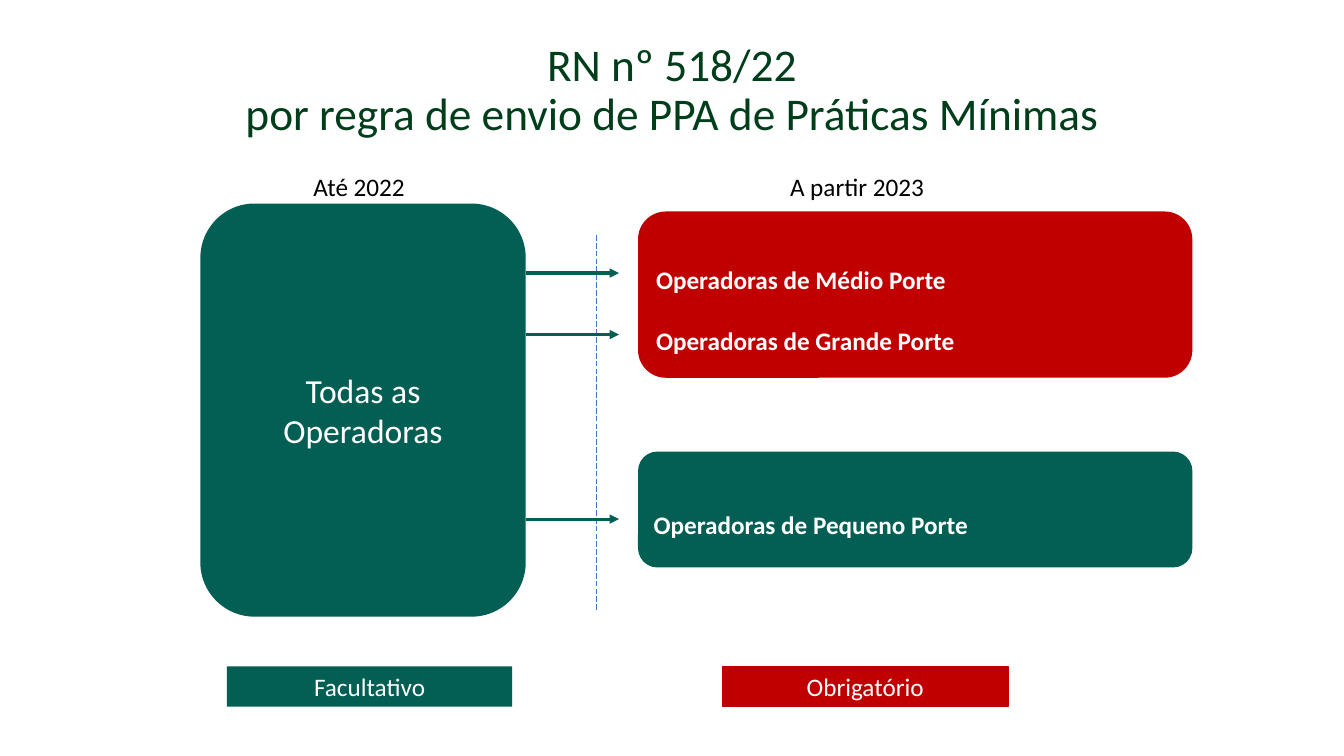
from dataclasses import dataclass

from lxml.etree import SubElement
from pptx import Presentation
from pptx.dml.color import RGBColor
from pptx.enum.dml import MSO_LINE
from pptx.enum.shapes import MSO_CONNECTOR, MSO_SHAPE
from pptx.enum.text import MSO_ANCHOR as Anchor, PP_ALIGN as Align
from pptx.oxml.ns import qn
from pptx.slide import Slide
from pptx.util import Cm, Pt

COLORS = {
    "title": "003E1B",
    "optional": "035E53",
    "mandatory": "C00000",
    "divider": "4472C4",
    "black": "000000",
    "white": "FFFFFF",
}
FONT = "Calibri"


@dataclass(frozen=True)
class Block:
    """Text in an area given in centimetres; without a fill it is a text box."""
    lines: tuple[str, ...]
    left: float
    top: float
    width: float
    height: float
    size: float = 18
    color: str = "white"
    fill: str | None = None
    outline: str | None = None
    preset: MSO_SHAPE = MSO_SHAPE.RECTANGLE
    align: Align = Align.CENTER
    anchor: Anchor = Anchor.MIDDLE
    bold: bool = False
    spacing: float = 1.0


@dataclass(frozen=True)
class Line:
    start: tuple[float, float]
    end: tuple[float, float]
    color: str
    weight: float
    dashed: bool = False
    arrow: bool = False


ROUNDED = MSO_SHAPE.ROUNDED_RECTANGLE
GROUP_LEFT, GROUP_WIDTH = 16.08, 13.97
LEGEND_TOP, LEGEND_WIDTH, LEGEND_HEIGHT = 16.79, 7.19, 1.02
ARROW_START, ARROW_END = 13.26, 15.6
ARROW_HEIGHTS = (6.88, 8.43, 13.08)

BLOCKS = (
    Block(("RN nº 518/22\vpor regra de envio de PPA de Práticas Mínimas",),
          0, 1.19, 33.87, 2.46, size=32.4, color="title",
          anchor=Anchor.BOTTOM, spacing=0.9),
    Block(("Todas as Operadoras",), 5.05, 5.13, 8.2, 10.41, size=24,
          fill="optional", preset=ROUNDED),
    Block(("Operadoras de Médio Porte", "Operadoras de Grande Porte"),
          GROUP_LEFT, 5.33, GROUP_WIDTH, 4.19, fill="mandatory",
          preset=ROUNDED, align=Align.LEFT, bold=True, spacing=2.0),
    Block(("Operadoras de Pequeno Porte",),
          GROUP_LEFT, 11.38, GROUP_WIDTH, 2.92, fill="optional",
          preset=ROUNDED, align=Align.LEFT, bold=True, spacing=2.0),
    Block(("Até 2022",), 7.65, 4.19, 4, 1.02, color="black",
          align=Align.LEFT, anchor=Anchor.TOP),
    Block(("A partir 2023",), 19.66, 4.19, 5, 1.02, color="black",
          align=Align.LEFT, anchor=Anchor.TOP),
    Block(("Facultativo",), 5.72, LEGEND_TOP, LEGEND_WIDTH, LEGEND_HEIGHT,
          fill="optional"),
    Block(("Obrigatório",), 18.21, LEGEND_TOP, LEGEND_WIDTH, LEGEND_HEIGHT,
          fill="mandatory", outline="mandatory"),
)
LINES = (
    Line((15.04, 5.92), (15.04, 15.39), "divider", 0.5, dashed=True),
    *(Line((ARROW_START, y), (ARROW_END, y), "optional", 2.25, arrow=True)
      for y in ARROW_HEIGHTS),
)


def rgb(name: str) -> RGBColor:
    return RGBColor.from_string(COLORS[name])


def draw_block(slide: Slide, block: Block) -> None:
    area = [Cm(v) for v in (block.left, block.top, block.width, block.height)]
    if block.fill:
        shape = slide.shapes.add_shape(block.preset, *area)
        shape.shadow.inherit = False
        shape.fill.solid()
        shape.fill.fore_color.rgb = rgb(block.fill)
        if block.outline:
            shape.line.color.rgb = rgb(block.outline)
            shape.line.width = Pt(1)
        else:
            shape.line.fill.background()
    else:
        shape = slide.shapes.add_textbox(*area)

    frame = shape.text_frame
    frame.word_wrap = True
    frame.vertical_anchor = block.anchor
    frame.text = "\n".join(block.lines)
    for paragraph in frame.paragraphs:
        paragraph.alignment = block.align
        paragraph.line_spacing = block.spacing
        font = paragraph.font
        font.name = FONT
        font.size = Pt(block.size)
        font.bold = block.bold
        font.color.rgb = rgb(block.color)


def draw_line(slide: Slide, line: Line) -> None:
    points = [Cm(v) for v in (*line.start, *line.end)]
    connector = slide.shapes.add_connector(MSO_CONNECTOR.STRAIGHT, *points)
    connector.line.color.rgb = rgb(line.color)
    connector.line.width = Pt(line.weight)
    if line.dashed:
        connector.line.dash_style = MSO_LINE.LONG_DASH
    properties = connector.element.spPr
    if line.arrow:
        SubElement(properties.find(qn("a:ln")), qn("a:tailEnd"), type="triangle")
    SubElement(properties, qn("a:effectLst"))


def main() -> None:
    presentation = Presentation()
    presentation.slide_width = Cm(33.87)
    presentation.slide_height = Cm(19.05)
    slide = presentation.slides.add_slide(presentation.slide_layouts[6])
    for block in BLOCKS:
        draw_block(slide, block)
    for line in LINES:
        draw_line(slide, line)
    presentation.save("out.pptx")


if __name__ == "__main__":
    main()
